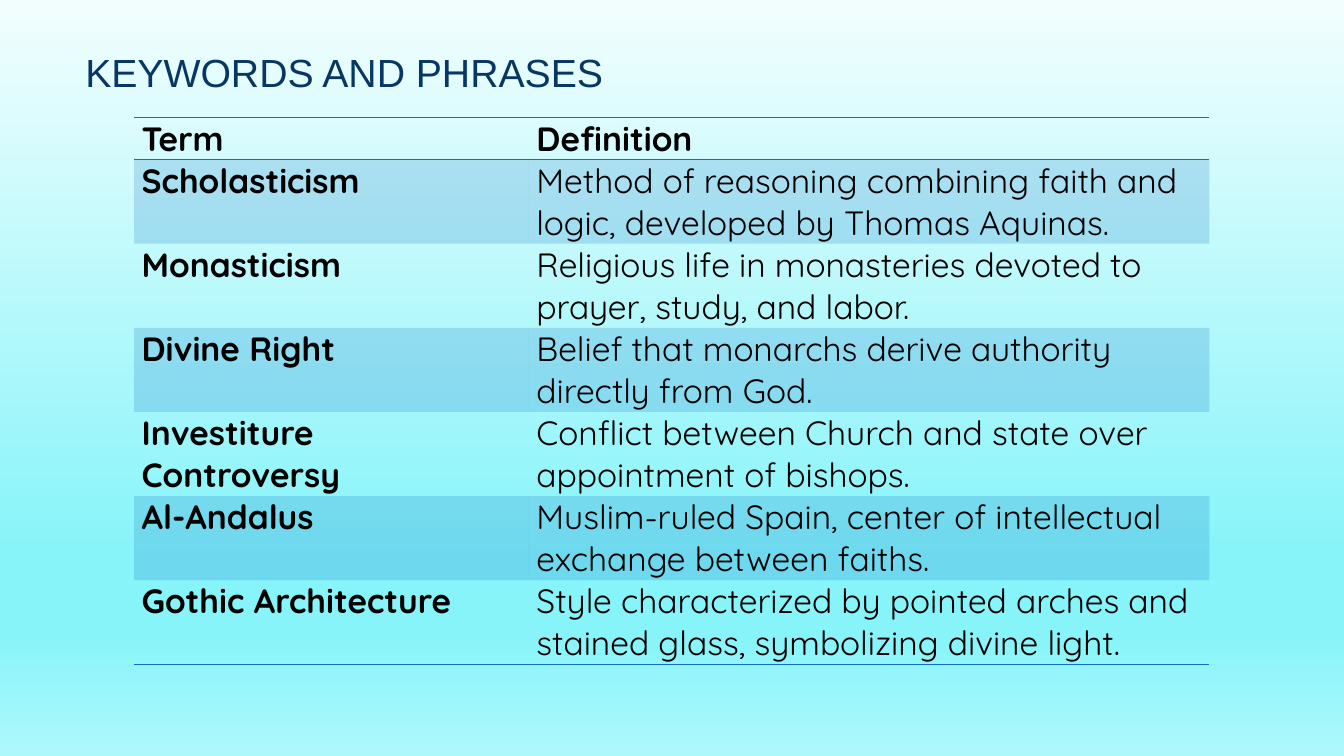
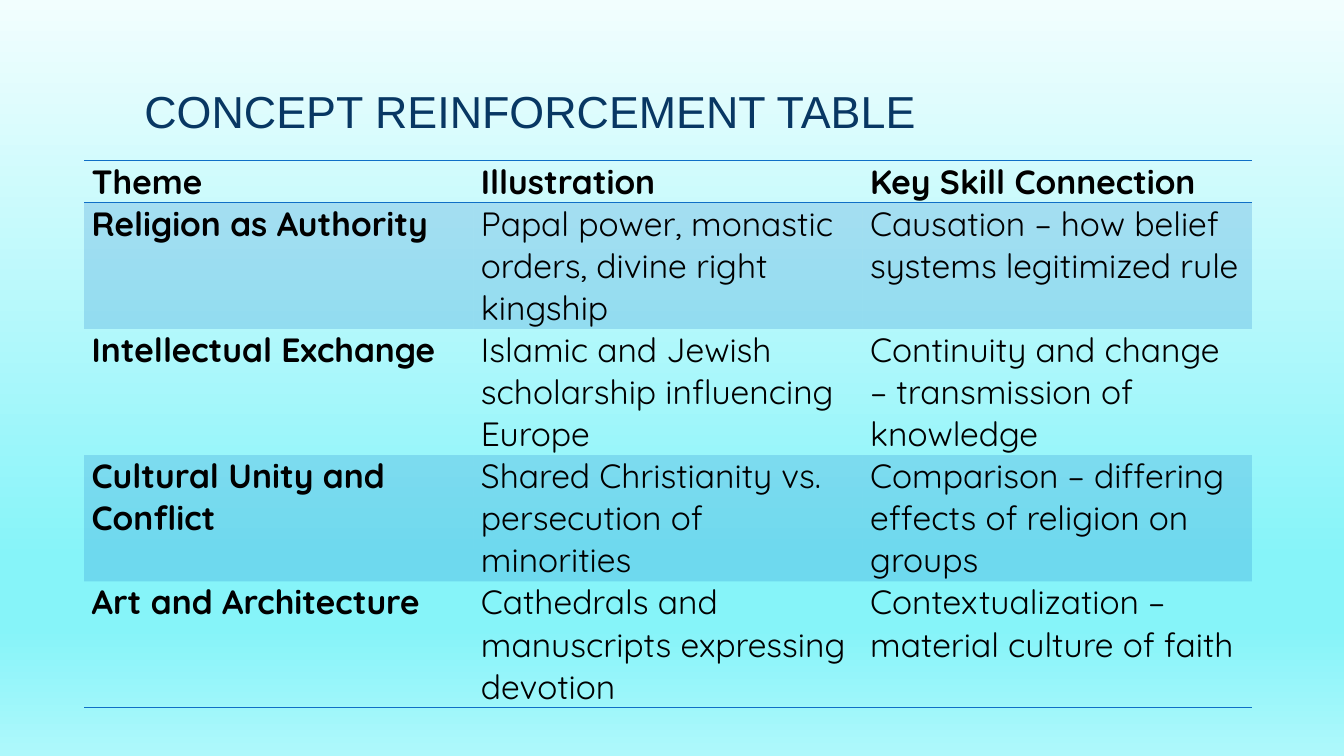
import pptx
import pptx.util
import pptx.dml.color
import pptx.enum.text
import pptx.oxml
import pptx.oxml.ns
import lxml.etree

Cm = pptx.util.Cm
Pt = pptx.util.Pt
qn = pptx.oxml.ns.qn

COLOURS = {
    "title": "083763",
    "text": "000000",
    "accent": "0F6FC6",
    "sky_top": "F2FEFE",
    "sky_deep": "86F4F9",
    "sky_foot": "AEF8FB",
}
SKY_STOPS = [(0, "sky_top"), (74, "sky_deep"), (83, "sky_deep"), (100, "sky_foot")]
PLAIN_TABLE_STYLE = "{2D5ABB26-0587-4C30-8999-92F81FD0307C}"
LINE_HEIGHT = 1.06
CELL_INSET = 0.19

PAGES = [
    {
        "title": "KEYWORDS AND PHRASES",
        "title_size": 28,
        "title_box": (1.9, 0.56, 27.1, 1.98),
        "table_at": (3.38, 2.96),
        "columns": [9.95, 17.15],
        "lines_per_row": 2,
        "rows": [
            ("Term", "Definition"),
            ("Scholasticism", "Method of reasoning combining faith and logic, developed by Thomas Aquinas."),
            ("Monasticism", "Religious life in monasteries devoted to prayer, study, and labor."),
            ("Divine Right", "Belief that monarchs derive authority directly from God."),
            ("Investiture Controversy", "Conflict between Church and state over appointment of bishops."),
            ("Al-Andalus", "Muslim-ruled Spain, center of intellectual exchange between faiths."),
            ("Gothic Architecture", "Style characterized by pointed arches and stained glass, symbolizing divine light."),
        ],
    },
    {
        "title": "CONCEPT REINFORCEMENT TABLE",
        "title_size": 32,
        "title_box": (3.39, 0.76, 27.74, 2.84),
        "table_at": (2.12, 4.05),
        "columns": [9.81, 9.81, 9.81],
        "lines_per_row": 3,
        "rows": [
            ("Theme", "Illustration", "Key Skill Connection"),
            ("Religion as Authority", "Papal power, monastic orders, divine right kingship",
             "Causation – how belief systems legitimized rule"),
            ("Intellectual Exchange", "Islamic and Jewish scholarship influencing Europe",
             "Continuity and change – transmission of knowledge"),
            ("Cultural Unity and Conflict", "Shared Christianity vs. persecution of minorities",
             "Comparison – differing effects of religion on groups"),
            ("Art and Architecture", "Cathedrals and manuscripts expressing devotion",
             "Contextualization – material culture of faith"),
        ],
    },
]


def add_span(para, text, font, size, colour, bold=False):
    span = para.add_run()
    span.text = text
    span.font.name = font
    span.font.size = Pt(size)
    span.font.bold = bold
    span.font.color.rgb = pptx.dml.color.RGBColor.from_string(COLOURS[colour])


def add_border(cell, side):
    border = lxml.etree.SubElement(cell._tc.get_or_add_tcPr(), qn("a:" + side), w=str(Pt(1)))
    paint = lxml.etree.SubElement(border, qn("a:solidFill"))
    lxml.etree.SubElement(paint, qn("a:srgbClr"), val=COLOURS["accent"])


deck = pptx.Presentation()
deck.slide_width = Cm(33.87)
deck.slide_height = Cm(19.05)

sky = deck.slide_master.background.fill
sky.gradient()
sky.gradient_angle = 270
stop_list = deck.slide_master._element.find(".//" + qn("a:gsLst"))
for stop in list(stop_list):
    stop_list.remove(stop)
for position, colour in SKY_STOPS:
    stop = lxml.etree.SubElement(stop_list, qn("a:gs"), pos=str(position * 1000))
    lxml.etree.SubElement(stop, qn("a:srgbClr"), val=COLOURS[colour])

for content in PAGES:
    page = deck.slides.add_slide(deck.slide_layouts[6])

    box = page.shapes.add_textbox(*[Cm(length) for length in content["title_box"]])
    box.text_frame.word_wrap = True
    box.text_frame.vertical_anchor = pptx.enum.text.MSO_ANCHOR.BOTTOM
    para = box.text_frame.paragraphs[0]
    para.line_spacing = 0.9
    add_span(para, content["title"], "Arial", content["title_size"], "title")

    rows = content["rows"]
    columns = content["columns"]
    heights = [LINE_HEIGHT] + [LINE_HEIGHT * content["lines_per_row"]] * (len(rows) - 1)
    left, top = content["table_at"]
    table = page.shapes.add_table(len(rows), len(columns), Cm(left), Cm(top),
                                  Cm(sum(columns)), Cm(sum(heights))).table
    table._tbl.tblPr.find(qn("a:tableStyleId")).text = PLAIN_TABLE_STYLE
    for column, width in zip(table.columns, columns):
        column.width = Cm(width)

    for row_index, texts in enumerate(rows):
        table.rows[row_index].height = Cm(heights[row_index])
        for column_index, text in enumerate(texts):
            cell = table.cell(row_index, column_index)
            cell.margin_left = cell.margin_right = Cm(CELL_INSET)
            cell.margin_top = cell.margin_bottom = 0
            add_span(cell.text_frame.paragraphs[0], text, "Quicksand", 24, "text",
                     bold=row_index == 0 or column_index == 0)

            if row_index == 0:
                add_border(cell, "lnT")
            if row_index in (0, len(rows) - 1):
                add_border(cell, "lnB")

            if row_index % 2:
                cell.fill.solid()
                cell.fill.fore_color.rgb = pptx.dml.color.RGBColor.from_string(COLOURS["accent"])
                tint = cell._tc.tcPr.find(qn("a:solidFill") + "/" + qn("a:srgbClr"))
                lxml.etree.SubElement(tint, qn("a:alpha"), val="20000")
            else:
                cell.fill.background()

deck.save("out.pptx")
